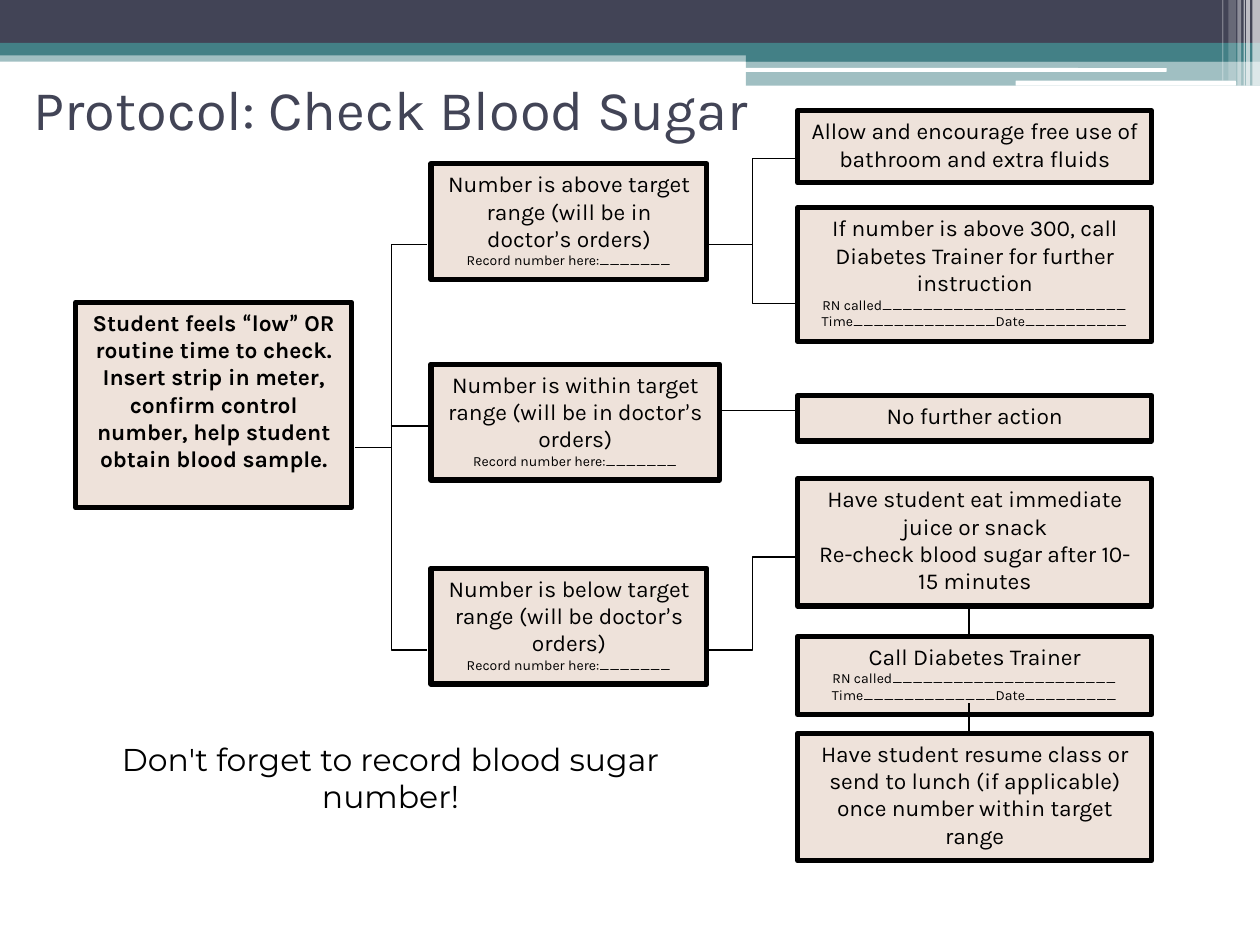
import itertools

import lxml.etree
import pptx
import pptx.dml.color
import pptx.enum.shapes
import pptx.enum.text
import pptx.oxml.ns
import pptx.util

Inches = pptx.util.Inches
Pt = pptx.util.Pt
qn = pptx.oxml.ns.qn
SHAPE = pptx.enum.shapes.MSO_SHAPE
CONNECTOR = pptx.enum.shapes.MSO_CONNECTOR
ANCHOR = pptx.enum.text.MSO_ANCHOR

COLORS = {"navy": "424456", "teal": "438086", "white": "FFFFFF",
          "box": "EEE2DA", "black": "000000"}
RECORD = ("Record number here:" + "_" * 7, 8)


class SlideBuilder:
    """Holds the flowchart style and the slide being built."""

    font = "Karla"
    quote_font = "Calibri"
    body_size = 13

    def __init__(self, prs):
        self.slide = prs.slides.add_slide(prs.slide_layouts[5])

    def color(self, name):
        return pptx.dml.color.RGBColor.from_string(COLORS[name])

    def paragraph(self, p, text, size, color="black", bold=False, font=None):
        p.alignment = pptx.enum.text.PP_ALIGN.CENTER
        for is_quote, chars in itertools.groupby(text, lambda c: c in "“”’"):
            r = p.add_run()
            r.text = "".join(chars)
            r.font.name = self.quote_font if is_quote else font or self.font
            r.font.size = Pt(size)
            r.font.bold = bold
            r.font.color.rgb = self.color(color)

    def title(self, text, left, top, width, height):
        sp = self.slide.shapes.title
        sp.left, sp.top = Inches(left), Inches(top)
        sp.width, sp.height = Inches(width), Inches(height)
        tf = sp.text_frame
        tf.auto_size = pptx.enum.text.MSO_AUTO_SIZE.NONE
        tf.vertical_anchor = ANCHOR.TOP
        self.paragraph(tf.paragraphs[0], text, 32, "navy")

    def shape(self, left, top, width, height, fill, kind=SHAPE.RECTANGLE):
        sp = self.slide.shapes.add_shape(
            kind, Inches(left), Inches(top), Inches(width), Inches(height))
        sp.shadow.inherit = False
        sp.fill.solid()
        sp.fill.fore_color.rgb = self.color(fill)
        sp.line.fill.background()
        return sp

    def bar(self, left, top, width, height, fill, opacity=100, kind=SHAPE.RECTANGLE):
        sp = self.shape(left, top, width, height, fill, kind)
        if opacity < 100:
            clr = sp.element.spPr.find(qn("a:solidFill"))[0]
            lxml.etree.SubElement(clr, qn("a:alpha"), val=str(opacity * 1000))

    def box(self, left, top, width, height, *lines, bold=False):
        sp = self.shape(left, top, width, height, "box")
        sp.line.color.rgb = self.color("black")
        sp.line.width = Pt(3)
        tf = sp.text_frame
        tf.word_wrap = True
        tf.vertical_anchor = ANCHOR.TOP
        for i, line in enumerate(lines):
            text, size = line if isinstance(line, tuple) else (line, self.body_size)
            p = tf.add_paragraph() if i else tf.paragraphs[0]
            self.paragraph(p, text, size, bold=bold)

    def note(self, text, left, top, width, height):
        sp = self.slide.shapes.add_textbox(
            Inches(left), Inches(top), Inches(width), Inches(height))
        sp.text_frame.word_wrap = False
        self.paragraph(sp.text_frame.paragraphs[0], text, 18, font="Montserrat")

    def link(self, x1, y1, x2, y2, kind=CONNECTOR.STRAIGHT):
        cxn = self.slide.shapes.add_connector(
            kind, Inches(x1), Inches(y1), Inches(x2), Inches(y2))
        cxn.line.color.rgb = self.color("black")
        cxn.line.width = Pt(0.75)
        lxml.etree.SubElement(cxn.element.spPr, qn("a:effectLst"))


def call_log(called, time, date):
    return (("RN called" + "_" * called, 8),
            ("Time" + "_" * time + "Date" + "_" * date, 8))


def draw_banner(s):
    s.bar(0, 0.4, 10, 0.09, "teal", 50)
    s.bar(0, 0, 10, 0.34, "navy")
    s.bar(0, 0.34, 10, 0.1, "teal")
    s.bar(5.92, 0.39, 4.08, 0.1, "teal")
    s.bar(5.92, 0.48, 4.08, 0.2, "teal", 50)
    s.bar(5.91, 0.54, 3.35, 0.03, "white", kind=SHAPE.ROUNDED_RECTANGLE)
    s.bar(8.06, 0.64, 1.75, 0.04, "white", kind=SHAPE.ROUNDED_RECTANGLE)
    for left, width, height, opacity in (
            (9.94, 0.06, 0.68, 65), (9.89, 0.03, 0.68, 65), (9.87, 0.01, 0.68, 60),
            (9.82, 0.03, 0.68, 40), (9.75, 0.06, 0.64, 20), (9.7, 0.01, 0.64, 30)):
        s.bar(left, 0, width, height, "white", opacity)


def draw_boxes(s):
    s.box(0.6, 2.4, 2.19, 1.63, "Student feels “low” OR", "routine time to check.",
          "Insert strip in meter, confirm control number, help student "
          "obtain blood sample.", bold=True)
    for top, width, result in (
            (1.3, 2.19, "above target range (will be in"),
            (2.89, 2.29, "within target range (will be in"),
            (4.51, 2.19, "below target range (will be")):
        s.box(3.42, top, width, 0.92, f"Number is {result} doctor’s orders)", RECORD)
    for top, height, *lines in (
            (0.88, 0.57, "Allow and encourage free use of bathroom and extra fluids"),
            (1.65, 1.06, "If number is above 300, call Diabetes Trainer for further "
             "instruction", *call_log(24, 14, 10)),
            (3.14, 0.36, "No further action"),
            (3.8, 1.01, "Have student eat immediate juice or snack",
             "Re-check blood sugar after 10-15 minutes"),
            (5.05, 0.62, "Call Diabetes Trainer", *call_log(22, 13, 9)),
            (5.82, 1.01, "Have student resume class or send to lunch (if applicable) "
             "once number within target range")):
        s.box(6.33, top, 2.81, height, *lines)


def draw_links(s):
    for y in (1.94, 5.16):
        s.link(2.82, 3.55, 3.39, y, CONNECTOR.ELBOW)
    for y1, y2 in ((1.94, 1.26), (1.94, 2.41), (5.16, 4.42)):
        s.link(5.63, y1, 6.31, y2, CONNECTOR.ELBOW)
    s.link(3.1, 3.38, 3.42, 3.38)
    s.link(5.71, 3.26, 6.33, 3.26)
    for y in (4.81, 5.58):
        s.link(7.69, y, 7.69, y + 0.24)


def main():
    prs = pptx.Presentation()
    prs.slide_width, prs.slide_height = Inches(10), Inches(7.5)
    s = SlideBuilder(prs)
    draw_banner(s)
    s.title("Protocol: Check Blood Sugar", -0.28, 0.54, 6.77, 0.64)
    draw_boxes(s)
    s.note("Don't forget to record blood sugar number!", 0.6, 5.82, 5, 1.19)
    draw_links(s)
    prs.save("out.pptx")


if __name__ == "__main__":
    main()
